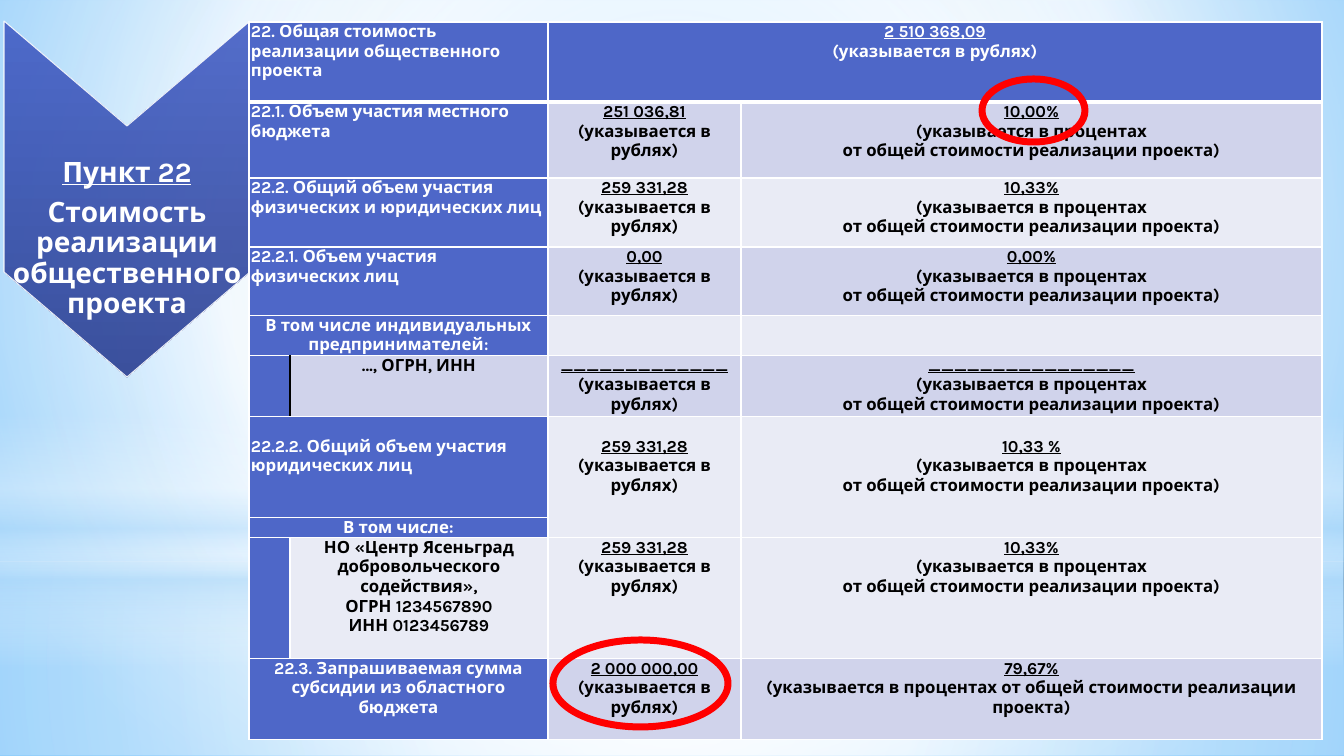
from lxml.etree import SubElement
from pptx import Presentation
from pptx.dml.color import RGBColor
from pptx.enum.shapes import MSO_SHAPE
from pptx.enum.text import MSO_ANCHOR, PP_ALIGN
from pptx.oxml import parse_xml
from pptx.oxml.ns import nsdecls, qn
from pptx.util import Pt

PX = 12192000 / 1344
FONT = "Karla"
COLORS = {
    "white": "FFFFFF", "black": "000000", "red": "FF0000", "label": "4E67C8",
    "dark": "D0D3EB", "light": "E9EBF5", "sky": "B4DCFA",
    "bg_start": "9ED5FF", "bg_end": "5BB9FF", "top": "435EC5", "bottom": "2B4092",
}

# Content
RUB = "(указывается в рублях)"
PCT = ["(указывается в процентах", "от общей стоимости реализации проекта)"]
PCT_LINE = ["(указывается в процентах от общей стоимости реализации проекта)"]
CHEVRON_TEXT = ["Пункт 22", "Стоимость реализации общественного проекта"]
CHEVRON = [(250, 21), (250, 272), (127, 377), (4, 272), (4, 21), (127, 126)]
COLUMNS = [41, 258, 193, 581]
TABLE_AT = (249, 22)
TOP_GAP = {6: 20}  # row: extra space above its text
# height, label lines ("|" starts a Cambria run), alignment, amount, percent, band
L, C = PP_ALIGN.LEFT, PP_ALIGN.CENTER
ROWS = [
    (80, ["22. Общая стоимость реализации общественного проекта"], L,
     ["2 510 368,09", RUB], [], "label"),
    (76, ["22.1. Объем участия местного бюджета"], L,
     ["251 036,81", RUB], ["10,00%"] + PCT, "dark"),
    (69, ["22.2. Общий объем участия физических и юридических лиц"], L,
     ["259 331,28", RUB], ["10,33%"] + PCT, "light"),
    (69, ["22.2.1. Объем участия физических лиц"], L,
     ["0,00", RUB], ["0,00%"] + PCT, "dark"),
    (40, ["В том числе индивидуальных предпринимателей|:"], C, [], [], "light"),
    (61, ["…, ОГРН, ИНН"], C,
     ["_" * 13, RUB], ["_" * 16] + PCT, "dark"),
    (101, ["22.2.2. Общий объем участия юридических лиц"], L,
     ["259 331,28", RUB], ["10,33 %"] + PCT, "light"),
    (20, ["В том числе:"], C, [], [], "light"),
    (121, ["НО «Центр Ясеньград добровольческого содействия»,",
           "ОГРН 1234567890", "ИНН 0123456789"], C,
     ["259 331,28", RUB], ["10,33%"] + PCT, "light"),
    (81, ["22.3. Запрашиваемая сумма субсидии из областного бюджета"], C,
     ["2 000 000,00", RUB], ["79,67%"] + PCT_LINE, "dark"),
]
HEADER, AMOUNT_SPAN = 0, (6, 7)
INDENTED = {5, 8}  # rows whose label sits in the second column
MARKS = [(982, 79, 103, 63), (553, 640, 175, 87)]

# Backdrop: box, shape, stops (position, colour, opacity), focus rectangle or None
CENTER = (50, 50, 50, 50)
BACKGROUND = [(0, "bg_start", 100), (60, "white", 100), (100, "bg_end", 100)]
BACKDROP = [
    ((0, 562, 1344, 194), MSO_SHAPE.RECTANGLE,
     [(0, "white", 91), (37, "white", 76), (100, "sky", 79)], CENTER),
    ((0, 0, 1344, 562), MSO_SHAPE.RECTANGLE,
     [(0, "white", 89), (48, "white", 62), (100, "sky", 79)], CENTER),
    ((0, 415, 1344, 252), MSO_SHAPE.RECTANGLE,
     [(0, "white", 0), (29, "white", 30), (45, "sky", 40), (55, "white", 26),
      (65, "sky", 60), (100, "white", 0)], None),
    ((0, 176, 1344, 562), MSO_SHAPE.OVAL,
     [(0, "white", 100), (56, "white", 0)], CENTER),
]


def px(n):
    return round(n * PX)


def rgb(name):
    return RGBColor.from_string(COLORS[name])


def set_gradient(props, stops, focus=None):
    """Swap the solid fill in props for a circular or top-down gradient."""
    gs = "".join(
        f'<a:gs pos="{pos * 1000}"><a:srgbClr val="{COLORS[color]}">'
        f'<a:alpha val="{alpha * 1000}"/></a:srgbClr></a:gs>'
        for pos, color, alpha in stops)
    if focus:
        sides = " ".join(f'{k}="{v * 1000}"' for k, v in zip("ltrb", focus))
        way = f'<a:path path="circle"><a:fillToRect {sides}/></a:path>'
    else:
        way = '<a:lin ang="5400000" scaled="0"/>'
    grad = parse_xml(f'<a:gradFill {nsdecls("a")} rotWithShape="1">'
                     f'<a:gsLst>{gs}</a:gsLst>{way}</a:gradFill>')
    props.replace(props.find(qn("a:solidFill")), grad)


def add_run(p, text, size, color, underline=False, font=FONT):
    r = p.add_run()
    r.text = text
    r.font.size, r.font.name, r.font.bold = Pt(size), font, True
    r.font.underline = underline
    r.font.color.rgb = rgb(color)


def paragraphs(tf, count):
    return [tf.paragraphs[0]] + [tf.add_paragraph() for _ in range(count - 1)]


def fill_cell(cell, lines, color, align, underline_first):
    for i, (p, line) in enumerate(zip(paragraphs(cell.text_frame, len(lines)), lines)):
        p.alignment = align
        for text, font in zip(line.split("|"), (FONT, "Cambria")):
            add_run(p, text, 12, color, underline_first and i == 0, font)


def set_borders(cell, row, col):
    tcPr = cell._tc.get_or_add_tcPr()
    for side in "LRTB":
        thick = (row, side) in ((HEADER, "B"), (HEADER + 1, "T"))
        divider = (row, col, side) in ((5, 0, "R"), (5, 1, "L"))
        ln = SubElement(tcPr, qn(f"a:ln{side}"), w=str(Pt(3 if thick else 1)))
        fill = SubElement(ln, qn("a:solidFill"))
        SubElement(fill, qn("a:srgbClr"), val=COLORS["black" if divider else "white"])


prs = Presentation()
prs.slide_width, prs.slide_height = px(1344), px(756)
s = prs.slides.add_slide(prs.slide_layouts[6])

# Background and backdrop
s.background.fill.solid()
set_gradient(s.element.find(".//" + qn("p:bgPr")), BACKGROUND, (20, 10, 20, 60))
for box, kind, stops, focus in BACKDROP:
    sp = s.shapes.add_shape(kind, *map(px, box))
    sp.shadow.inherit = False
    sp.line.fill.background()
    sp.fill.solid()
    set_gradient(sp._element.spPr, stops, focus)

# Chevron with the section title
builder = s.shapes.build_freeform(*CHEVRON[0], scale=PX)
builder.add_line_segments(CHEVRON[1:], close=True)
sp = builder.convert_to_shape()
sp.shadow.inherit = False
sp.fill.solid()
set_gradient(sp._element.spPr, [(0, "top", 90), (100, "bottom", 90)])
sp.line.color.rgb, sp.line.width = rgb("white"), Pt(0.75)
SubElement(sp._element.spPr.find(".//" + qn("a:ln")).find(".//" + qn("a:srgbClr")),
           qn("a:alpha"), val="90000")
tf = sp.text_frame
tf.word_wrap, tf.vertical_anchor = True, MSO_ANCHOR.MIDDLE
tf.margin_left = tf.margin_right = 0
tf.margin_top, tf.margin_bottom = px(135), px(55)
for i, (p, text) in enumerate(zip(paragraphs(tf, len(CHEVRON_TEXT)), CHEVRON_TEXT)):
    p.alignment, p.line_spacing, p.space_after = C, 0.9, Pt(7)
    add_run(p, text, 20, "white", i == 0)

# Cost table
heights = [row[0] for row in ROWS]
table = s.shapes.add_table(len(ROWS), len(COLUMNS), *map(
    px, (*TABLE_AT, sum(COLUMNS), sum(heights)))).table
table.first_row = table.horz_banding = False
for column, width in zip(table.columns, COLUMNS):
    column.width = px(width)
for i, (height, label, align, amount, percent, band) in enumerate(ROWS):
    table.rows[i].height = px(height)
    indented = i in INDENTED
    texts = [[], label, amount, percent] if indented else [label, [], amount, percent]
    for j, lines in enumerate(texts):
        cell = table.cell(i, j)
        cell.margin_left = cell.margin_right = px(2)
        cell.margin_top, cell.margin_bottom = px(TOP_GAP.get(i, 0)), 0
        set_borders(cell, i, j)
        is_label = j == 0 or (j == 1 and not indented)
        cell.fill.solid()
        cell.fill.fore_color.rgb = rgb("label" if is_label else band)
        if lines:
            color = "white" if is_label or i == HEADER else "black"
            fill_cell(cell, lines, color, align if j < 2 else C, j > 1)
        else:
            end = cell.text_frame.paragraphs[0]._p.get_or_add_endParaRPr()
            end.set("sz", "1200")
    if not indented:
        table.cell(i, 0).merge(table.cell(i, 1))
table.cell(HEADER, 2).merge(table.cell(HEADER, 3))
for j in (2, 3):
    table.cell(AMOUNT_SPAN[0], j).merge(table.cell(AMOUNT_SPAN[1], j))
table.cell(7, 0).vertical_anchor = MSO_ANCHOR.MIDDLE

# Red marks around key figures
for box in MARKS:
    sp = s.shapes.add_shape(MSO_SHAPE.OVAL, *map(px, box))
    sp.shadow.inherit = False
    sp.fill.background()
    sp.line.color.rgb, sp.line.width = rgb("red"), Pt(5)

prs.save("out.pptx")
